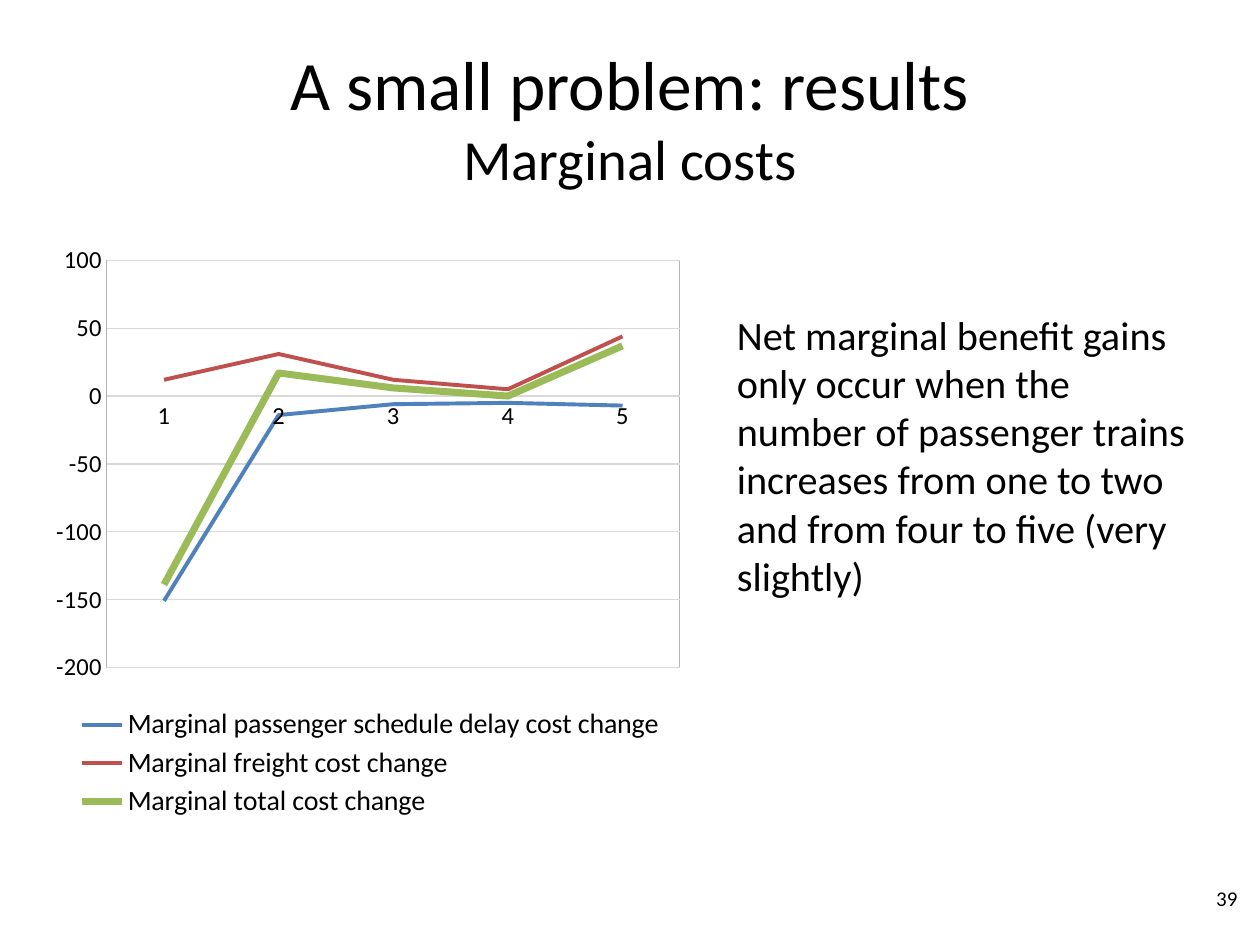
from dataclasses import dataclass

from lxml.etree import SubElement
from pptx import Presentation
from pptx.chart.data import CategoryChartData
from pptx.dml.color import RGBColor
from pptx.enum.chart import XL_CHART_TYPE, XL_LEGEND_POSITION, XL_TICK_MARK
from pptx.enum.text import MSO_ANCHOR, PP_ALIGN
from pptx.oxml import parse_xml
from pptx.oxml.ns import nsdecls, qn
from pptx.util import Inches, Pt


@dataclass(frozen=True)
class Theme:
    font: str = "Calibri"
    ink: str = "000000"
    grid: str = "D9D9D9"
    frame: str = "B3B3B3"
    title: float = 39.6
    subtitle: float = 32.4
    body: float = 23
    number: float = 12
    axis: float = 14
    legend: float = 16


THEME = Theme()

COST_SERIES = [
    ("Marginal passenger schedule delay cost change", (-151, -14, -6, -5, -7), "4F81BD", 2.25),
    ("Marginal freight cost change", (12, 31, 12, 5, 44), "C0504D", 2.25),
    ("Marginal total cost change", (-139, 17, 6, 0, 37), "9BBB59", 4),
]


def style_font(font, size):
    font.name = THEME.font
    font.size = Pt(size)
    font.color.rgb = RGBColor.from_string(THEME.ink)


def style_line(line, color, width):
    line.color.rgb = RGBColor.from_string(color)
    line.width = Pt(width)


def add_text(page, box, lines, align=PP_ALIGN.LEFT, anchor=MSO_ANCHOR.TOP):
    frame = page.shapes.add_textbox(*map(Inches, box)).text_frame
    frame.word_wrap = True
    frame.vertical_anchor = anchor
    para = frame.paragraphs[0]
    para.alignment = align
    for index, (text, size) in enumerate(lines):
        if index:
            para.add_line_break()
        span = para.add_run()
        span.text = text
        style_font(span.font, size)


def add_title(page, box):
    lines = [("A small problem: results", THEME.title), ("Marginal costs", THEME.subtitle)]
    add_text(page, box, lines, PP_ALIGN.CENTER, MSO_ANCHOR.MIDDLE)


def add_finding(page, box):
    text = (
        "Net marginal benefit gains only occur when the number of passenger trains "
        "increases from one to two and from four to five (very slightly)"
    )
    add_text(page, box, [(text, THEME.body)])


def add_page_number(page, box):
    add_text(page, box, [("39", THEME.number)], PP_ALIGN.RIGHT, MSO_ANCHOR.MIDDLE)


def set_layout(element, position, fractions, inner=False):
    for old in element.findall(qn("c:layout")):
        element.remove(old)
    layout = parse_xml(f"<c:layout {nsdecls('c')}><c:manualLayout/></c:layout>")
    settings = [("layoutTarget", "inner")] if inner else []
    settings += [("xMode", "edge"), ("yMode", "edge"), *zip("xywh", fractions)]
    for name, value in settings:
        SubElement(layout[0], qn(f"c:{name}")).set("val", str(value))
    element.insert(position, layout)


def frame_plot(plot_area):
    plot_area.append(parse_xml(
        f"<c:spPr {nsdecls('c', 'a')}><a:noFill/><a:ln w='{Pt(0.75)}'><a:solidFill>"
        f"<a:srgbClr val='{THEME.frame}'/></a:solidFill></a:ln></c:spPr>"
    ))


def add_cost_chart(page, box):
    data = CategoryChartData()
    data.categories = ["1", "2", "3", "4", "5"]
    for name, values, _, _ in COST_SERIES:
        data.add_series(name, values)
    chart = page.shapes.add_chart(XL_CHART_TYPE.LINE, *map(Inches, box), data).chart
    chart.has_title = False
    style_font(chart.font, THEME.axis)
    chart.plots[0].vary_by_categories = False

    for series, (_, _, color, width) in zip(chart.plots[0].series, COST_SERIES):
        series.smooth = False
        style_line(series.format.line, color, width)

    for axis in (chart.category_axis, chart.value_axis):
        axis.major_tick_mark = axis.minor_tick_mark = XL_TICK_MARK.NONE
        style_font(axis.tick_labels.font, THEME.axis)
    style_line(chart.category_axis.format.line, THEME.grid, 0.75)
    values = chart.value_axis
    values.minimum_scale, values.maximum_scale, values.major_unit = -200, 100, 50
    values.format.line.fill.background()
    style_line(values.major_gridlines.format.line, THEME.grid, 0.75)

    chart.has_legend = True
    legend = chart.legend
    legend.position = XL_LEGEND_POSITION.BOTTOM
    legend.include_in_layout = False
    style_font(legend.font, THEME.legend)
    legend_element = chart.element.find(f".//{qn('c:legend')}")
    set_layout(legend_element, 1, (0.04, 0.79, 0.93, 0.2))
    plot_area = chart.element.find(f".//{qn('c:plotArea')}")
    set_layout(plot_area, 0, (0.1, 0.05, 0.88, 0.68), inner=True)
    frame_plot(plot_area)


def main():
    deck = Presentation()
    deck.slide_width, deck.slide_height = Inches(10), Inches(7.5)
    page = deck.slides.add_slide(deck.slide_layouts[6])
    add_title(page, (0.5, 0.3, 9, 1.25))
    add_page_number(page, (8.75, 6.93, 1.17, 0.4))
    add_finding(page, (5.75, 2.41, 3.83, 2.42))
    add_cost_chart(page, (0.33, 1.83, 5.17, 4.75))
    deck.save("out.pptx")


if __name__ == "__main__":
    main()
